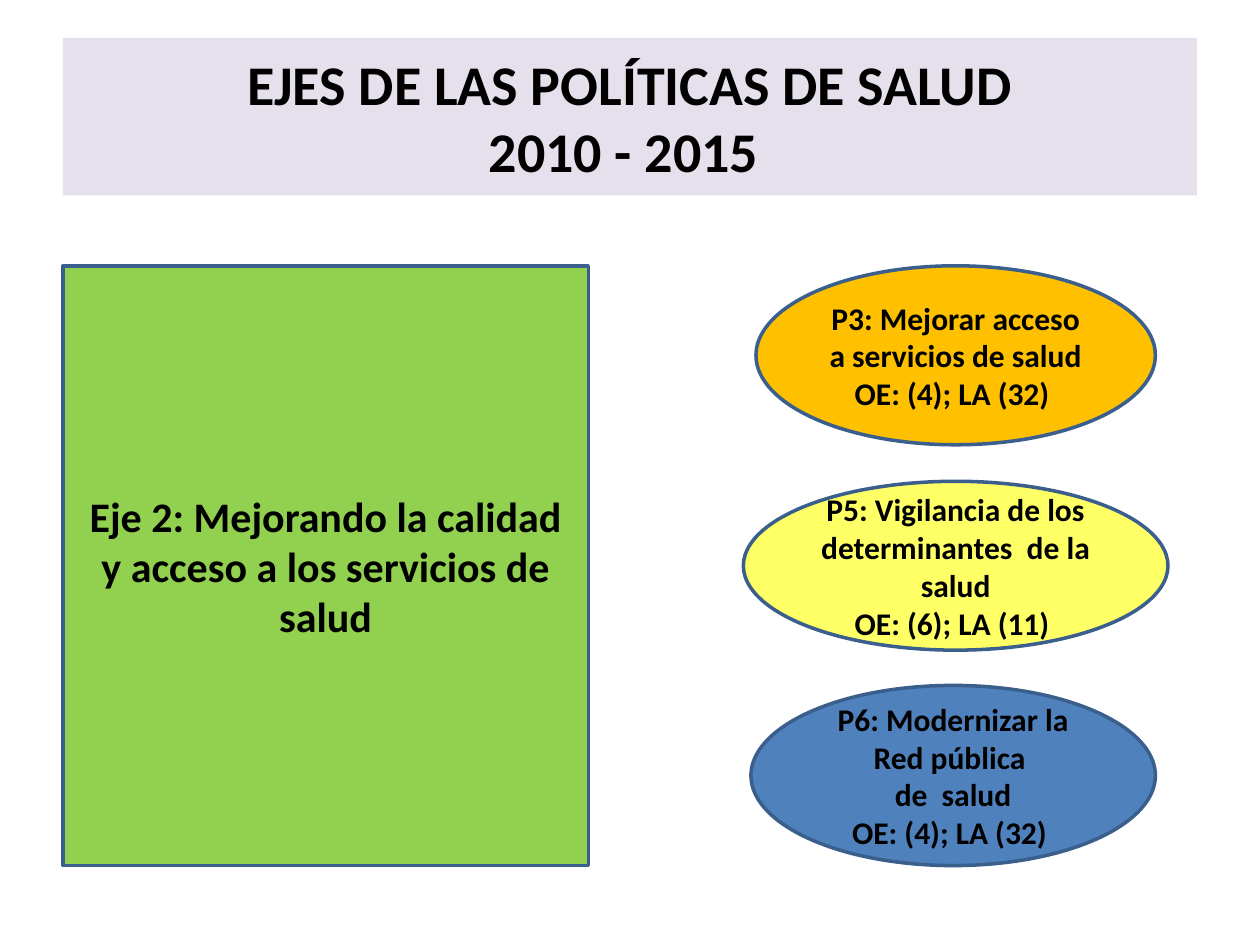
from dataclasses import dataclass

from pptx import Presentation
from pptx.dml.color import RGBColor
from pptx.enum.shapes import MSO_SHAPE as Shape
from pptx.enum.text import MSO_ANCHOR as Anchor, PP_ALIGN as Align
from pptx.util import Inches, Pt


@dataclass(frozen=True)
class Theme:
    font: str = "Calibri"
    text: str = "000000"
    outline: str = "3A5F8C"
    outline_width: float = 2
    banner: str = "E6E0EC"
    axis: str = "92D050"
    access: str = "FFC000"
    surveillance: str = "FFFF66"
    network: str = "4F81BD"
    title_size: int = 32
    axis_size: int = 24
    policy_size: int = 18


@dataclass(frozen=True)
class Panel:
    geometry: Shape
    left: float
    top: float
    width: float
    height: float
    fill: str
    size: int
    paragraphs: tuple[str, ...]
    outlined: bool = True


THEME = Theme()
LEFT, TOP = 0.5, 2.11

# Title banner and strategic axis
BANNER = Panel(Shape.RECTANGLE, LEFT, 0.3, 9, 1.25, THEME.banner, THEME.title_size,
               ("EJES DE LAS POLÍTICAS DE SALUD", "2010 - 2015 "), outlined=False)
AXIS = Panel(Shape.RECTANGLE, LEFT, TOP, 4.17, 4.76, THEME.axis, THEME.axis_size,
             ("Eje 2: Mejorando la calidad y acceso a los servicios de salud",))

# Policies that belong to the axis
POLICIES = (
    Panel(Shape.OVAL, 6, TOP, 3.17, 1.42, THEME.access, THEME.policy_size,
          ("P3: Mejorar acceso a servicios de salud", "OE: (4); LA (32) ")),
    Panel(Shape.OVAL, 5.9, 3.82, 3.37, 1.34, THEME.surveillance, THEME.policy_size,
          ("P5: Vigilancia de los determinantes  de la salud", "OE: (6); LA (11) ")),
    Panel(Shape.OVAL, 5.96, 5.44, 3.21, 1.43, THEME.network, THEME.policy_size,
          ("P6: Modernizar la Red pública ", "de  salud", "OE: (4); LA (32) ")),
)


def draw_panel(slide, panel: Panel) -> None:
    box = slide.shapes.add_shape(
        panel.geometry, Inches(panel.left), Inches(panel.top),
        Inches(panel.width), Inches(panel.height))
    box.shadow.inherit = False
    box.fill.solid()
    box.fill.fore_color.rgb = RGBColor.from_string(panel.fill)
    if panel.outlined:
        box.line.color.rgb = RGBColor.from_string(THEME.outline)
        box.line.width = Pt(THEME.outline_width)
    else:
        box.line.fill.background()
    write_text(box.text_frame, panel)


def write_text(frame, panel: Panel) -> None:
    frame_format = {"word_wrap": True, "vertical_anchor": Anchor.MIDDLE,
                    "margin_top": 0, "margin_bottom": 0}
    for attribute, value in frame_format.items():
        setattr(frame, attribute, value)
    frame.text = "\n".join(panel.paragraphs)
    font_format = {"name": THEME.font, "size": Pt(panel.size), "bold": True}
    for paragraph in frame.paragraphs:
        paragraph.alignment = Align.CENTER
        for run in paragraph.runs:
            for attribute, value in font_format.items():
                setattr(run.font, attribute, value)
            run.font.color.rgb = RGBColor.from_string(THEME.text)


def main() -> None:
    deck = Presentation()
    deck.slide_width, deck.slide_height = Inches(10), Inches(7.5)
    slide = deck.slides.add_slide(deck.slide_layouts[6])
    for panel in (AXIS, *POLICIES, BANNER):
        draw_panel(slide, panel)
    deck.save("out.pptx")


if __name__ == "__main__":
    main()
